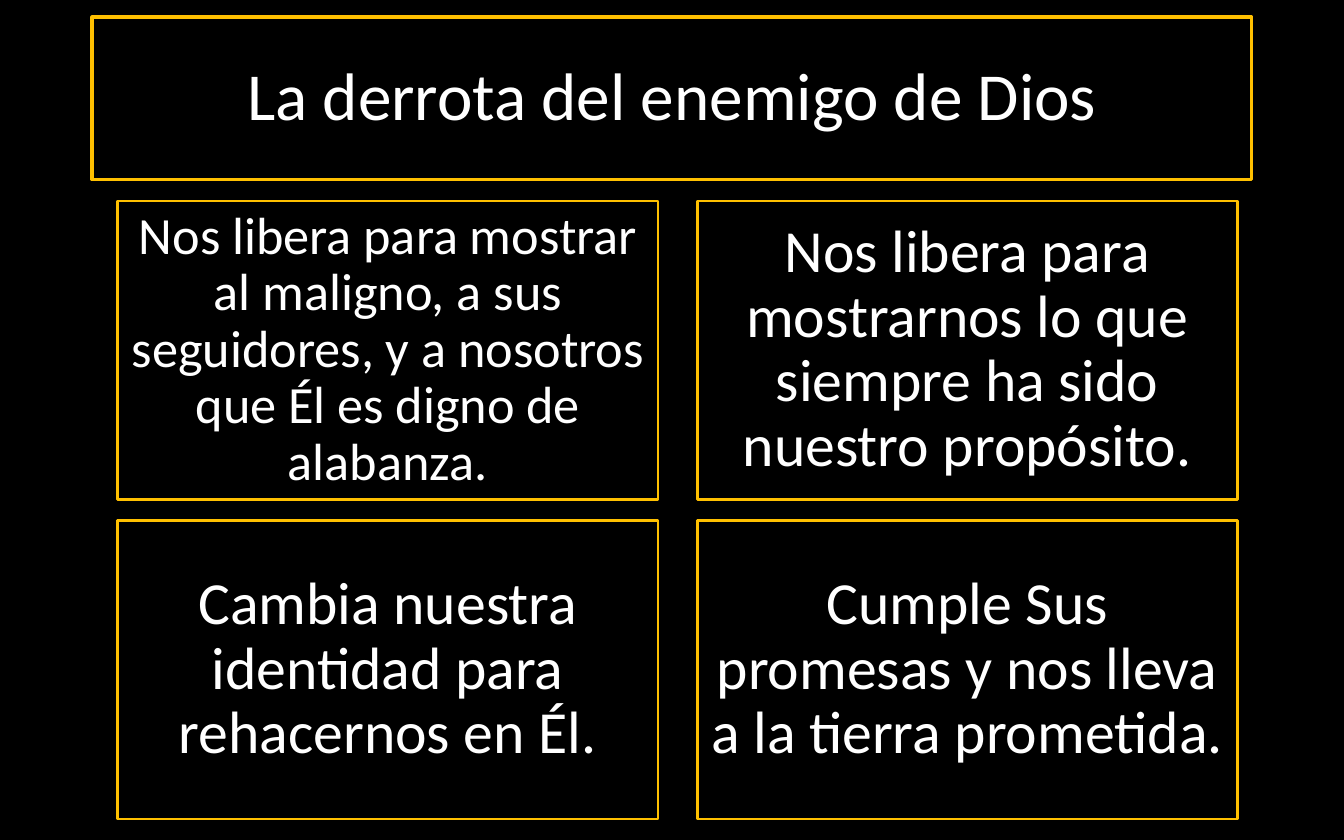
import pptx
import pptx.util
import pptx.dml.color
import pptx.enum.shapes
import pptx.enum.text

Pt = pptx.util.Pt
COLORS = {"background": "000000", "border": "FFC000", "text": "FFFFFF"}


def color(name):
    return pptx.dml.color.RGBColor.from_string(COLORS[name])


class SlideBuilder:
    """Holds the shared style and the slide being filled."""

    font_name = "Calibri"
    line_spacing = 0.9
    inset = 5

    def __init__(self, slide):
        self.slide = slide

    def background(self):
        fill = self.slide.background.fill
        fill.solid()
        fill.fore_color.rgb = color("background")

    def box(self, text, left, top, width, height, size, border, space_before=0):
        shape = self.slide.shapes.add_shape(
            pptx.enum.shapes.MSO_SHAPE.RECTANGLE,
            Pt(left), Pt(top), Pt(width), Pt(height))
        shape.shadow.inherit = False
        shape.fill.solid()
        shape.fill.fore_color.rgb = color("background")
        shape.line.color.rgb = color("border")
        shape.line.width = Pt(border)

        frame = shape.text_frame
        frame.word_wrap = True
        frame.vertical_anchor = pptx.enum.text.MSO_ANCHOR.MIDDLE
        frame.margin_left = frame.margin_right = Pt(self.inset)
        frame.margin_top = frame.margin_bottom = Pt(self.inset)
        frame.text = text
        paragraph = frame.paragraphs[0]
        paragraph.alignment = pptx.enum.text.PP_ALIGN.CENTER
        paragraph.line_spacing = self.line_spacing
        paragraph.space_before = Pt(space_before)
        font = paragraph.runs[0].font
        font.name = self.font_name
        font.size = Pt(size)
        font.color.rgb = color("text")


def main():
    presentation = pptx.Presentation()
    presentation.slide_width = Pt(720)
    presentation.slide_height = Pt(450)
    slide = presentation.slides.add_slide(presentation.slide_layouts[6])
    builder = SlideBuilder(slide)
    builder.background()
    builder.box("La derrota del enemigo de Dios", 49.5, 9.25, 621, 87, 36, 2)

    card_width, card_height = 289.5, 159.75
    column_gap, row_gap = 21, 11.5
    columns = [
        [("Nos libera para mostrar al maligno, a sus seguidores, "
          "y a nosotros que Él es digno de alabanza.", 28),
         ("Cambia nuestra identidad para rehacernos en Él.", 32)],
        [("Nos libera para mostrarnos lo que siempre ha sido "
          "nuestro propósito.", 32),
         ("Cumple Sus promesas y nos lleva a la tierra prometida.", 32)],
    ]
    for column, cards in enumerate(columns):
        for row, (text, size) in enumerate(cards):
            builder.box(text,
                        63 + column * (card_width + column_gap),
                        107.75 + row * (card_height + row_gap),
                        card_width, card_height, size, 1.5, space_before=7.5)

    presentation.save("out.pptx")


if __name__ == "__main__":
    main()
